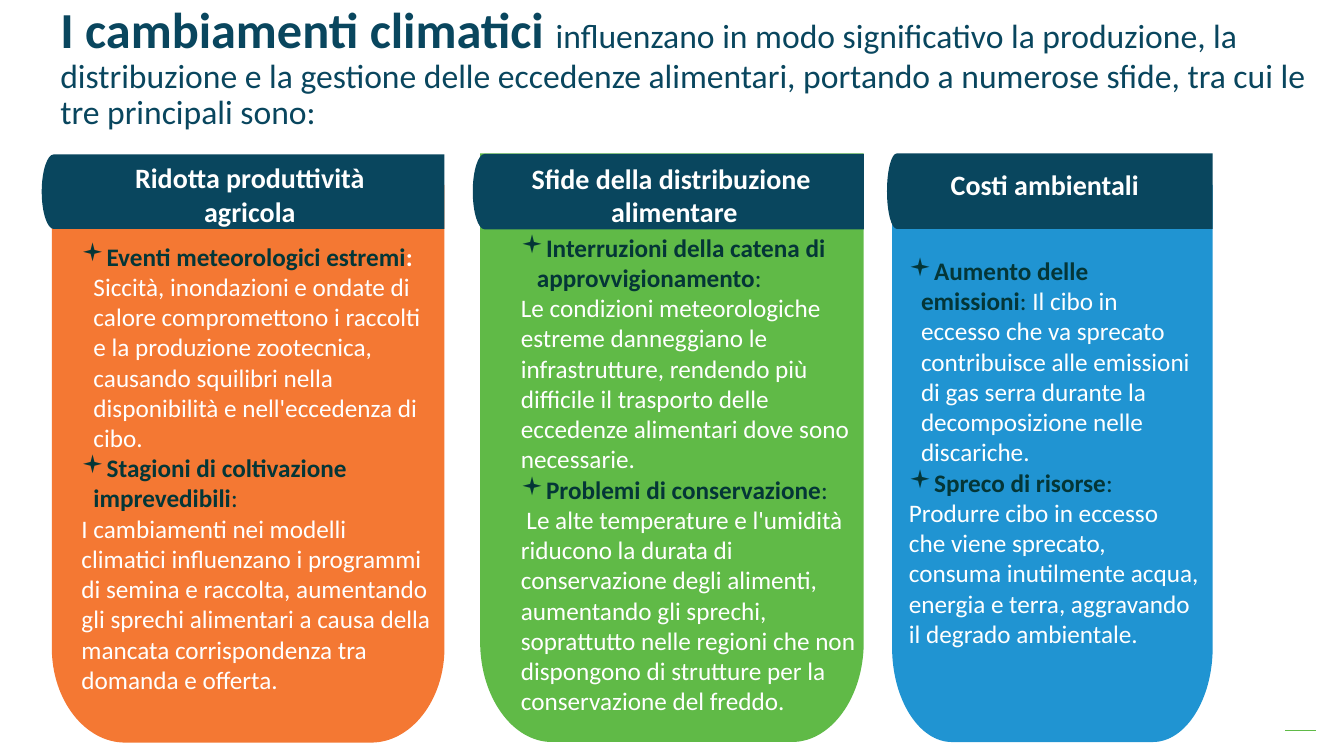
"""Build a slide with three cards on how climate change affects surplus food."""
from dataclasses import dataclass
from typing import Optional

import lxml.etree
import pptx
import pptx.dml.color
import pptx.enum.shapes
import pptx.enum.text
import pptx.oxml.ns
import pptx.util

FONT = "Calibri"
NAVY = "09465E"
INK = "043637"
WHITE = "FFFFFF"
GREEN = "60BA47"
ROUNDNESS = 0.55
Pt = pptx.util.Pt
qn = pptx.oxml.ns.qn
Point = tuple[float, float]


@dataclass
class Frame:
    left: float
    top: float
    width: float
    height: float


@dataclass
class Segment:
    end: Point
    corner: Optional[Point] = None


@dataclass
class Span:
    text: str
    color: str = WHITE
    bold: bool = False
    size: float = 18


@dataclass
class Para:
    spans: list[Span]
    margin: float = 0
    first: float = 0
    bullet: bool = False
    centered: bool = False


@dataclass
class Card:
    fill: str
    panel: Frame
    banner: Frame
    heading_frame: Frame
    heading: list[str]
    body_frame: Frame
    body: list[Para]


def rgb(color: str) -> pptx.dml.color.RGBColor:
    return pptx.dml.color.RGBColor.from_string(color)


def point(text: str, indent: float, *rest: Span) -> Para:
    return Para([Span(text, INK, True), *rest], indent, -indent, bullet=True)


def panel_outline(width: float, height: float) -> list[Segment]:
    rx, ry = 0.187 * width, 0.17 * height
    return [Segment((0, 0)), Segment((width, 0)), Segment((width, height - ry)),
            Segment((width - rx, height), (width, height)), Segment((rx, height)),
            Segment((0, height - ry), (0, height))]


def banner_outline(width: float, height: float) -> list[Segment]:
    rx = 0.03 * width
    return [Segment((width, 0)), Segment((width, height)), Segment((rx, height)),
            Segment((0, height / 2), (0, height)), Segment((rx, 0), (0, 0))]


def toward(start: Point, corner: Point) -> Point:
    return tuple(a + ROUNDNESS * (b - a) for a, b in zip(start, corner))


def add_outline(page, frame: Frame, segments: list[Segment], fill: str) -> None:
    ends = [(Pt(segment.end[0]), Pt(segment.end[1])) for segment in segments]
    builder = page.shapes.build_freeform(*ends[0], scale=1.0)
    builder.add_line_segments(ends[1:], close=True)
    shape = builder.convert_to_shape(Pt(frame.left), Pt(frame.top))
    lines = list(shape._element.iter(qn("a:lnTo")))
    for before, segment, line in zip(segments, segments[1:], lines):
        if segment.corner:
            line.tag = qn("a:cubicBezTo")
            controls = [toward(before.end, segment.corner), toward(segment.end, segment.corner)]
            for index, (x, y) in enumerate(controls):
                control = lxml.etree.Element(qn("a:pt"), x=str(Pt(x)), y=str(Pt(y)))
                line.insert(index, control)
    shape.shadow.inherit = False
    shape.fill.solid()
    shape.fill.fore_color.rgb = rgb(fill)
    shape.line.fill.background()


def add_text(page, frame: Frame, paras: list[Para]):
    box = page.shapes.add_textbox(Pt(frame.left), Pt(frame.top), Pt(frame.width), Pt(frame.height))
    text_frame = box.text_frame
    text_frame.word_wrap = True
    text_frame.auto_size = pptx.enum.text.MSO_AUTO_SIZE.SHAPE_TO_FIT_TEXT
    for index, para in enumerate(paras):
        paragraph = text_frame.add_paragraph() if index else text_frame.paragraphs[0]
        properties = paragraph._p.get_or_add_pPr()
        properties.set("marL", str(Pt(para.margin)))
        properties.set("indent", str(Pt(para.first)))
        if para.bullet:
            lxml.etree.SubElement(properties, qn("a:buFont"), typeface="Wingdings")
            lxml.etree.SubElement(properties, qn("a:buChar"), char="▪")
        if para.centered:
            paragraph.alignment = pptx.enum.text.PP_ALIGN.CENTER
        for span in para.spans:
            run = paragraph.add_run()
            run.text = span.text
            run.font.name = FONT
            run.font.size = Pt(span.size)
            run.font.bold = span.bold
            run.font.color.rgb = rgb(span.color)
    return box


def add_card(page, card: Card) -> None:
    panel, banner = card.panel, card.banner
    add_outline(page, panel, panel_outline(panel.width, panel.height), card.fill)
    add_outline(page, banner, banner_outline(banner.width, banner.height), NAVY)
    heading = [Para([Span(line, bold=True, size=20)], centered=True) for line in card.heading]
    add_text(page, card.heading_frame, heading)
    add_text(page, card.body_frame, card.body)


def add_title(page) -> None:
    title = Para([
        Span("I cambiamenti climatici ", NAVY, True, 36),
        Span("influenzano in modo significativo la produzione, la distribuzione e la gestione "
             "delle eccedenze alimentari, portando a numerose sfide, tra cui le tre principali "
             "sono:", NAVY, size=24)], margin=36)
    paragraph = add_text(page, Frame(0, 0, 948, 98.6), [title]).text_frame.paragraphs[0]
    paragraph.line_spacing = 0.9
    paragraph.space_after = Pt(8)


def add_accent(page) -> None:
    accent = page.shapes.add_connector(
        pptx.enum.shapes.MSO_CONNECTOR.STRAIGHT, Pt(918), Pt(522), Pt(940.3), Pt(522))
    accent.line.color.rgb = rgb(GREEN)
    accent.line.width = Pt(1)
    lxml.etree.SubElement(accent._element.spPr, qn("a:effectLst"))


COLON = Span(":", INK)
CARDS = [
    Card("F47833", Frame(37, 132, 280.5, 398.4), Frame(29.8, 110.3, 287.7, 53.3),
         Frame(69.8, 111.3, 217.4, 55.4), ["Ridotta produttività agricola"],
         Frame(51.1, 168.5, 267.8, 334), [
             point("Eventi meteorologici estremi", 8.6, Span(": ", bold=True),
                   Span("Siccità, inondazioni e ondate di calore compromettono i raccolti e la "
                        "produzione zootecnica, causando squilibri nella disponibilità e "
                        "nell'eccedenza di cibo.")),
             point("Stagioni di coltivazione imprevedibili", 8.6, COLON),
             Para([Span("I cambiamenti nei modelli climatici influenzano i programmi di semina "
                        "e raccolta, aumentando gli sprechi alimentari a causa della mancata "
                        "corrispondenza tra domanda e offerta.")])]),
    Card(GREEN, Frame(343, 109.6, 274, 420.4), Frame(337.7, 110, 279.3, 53.8),
         Frame(320.4, 111.6, 322.6, 55.4), ["Sfide della distribuzione ", "alimentare"],
         Frame(365, 162.2, 269.3, 356.4), [
             point("Interruzioni della catena di approvvigionamento", 11.5, COLON),
             Para([Span("Le condizioni meteorologiche estreme danneggiano le infrastrutture, "
                        "rendendo più difficile il trasporto delle eccedenze alimentari dove "
                        "sono necessarie.")]),
             point("Problemi di conservazione", 11.5, COLON),
             Para([Span("Le alte temperature e l'umidità riducono la durata di conservazione "
                        "degli alimenti, aumentando gli sprechi, soprattutto nelle regioni che "
                        "non dispongono di strutture per la conservazione del freddo.")],
                  first=4)]),
    Card("2094D2", Frame(637.2, 132, 229, 398), Frame(633.6, 109.6, 232.6, 53.9),
         Frame(661, 116.3, 170.6, 55.4), ["Costi ambientali"],
         Frame(642.2, 178.8, 221.8, 290.9), [
             point("Aumento delle emissioni", 8.6, Span(": ", INK),
                   Span("Il cibo in eccesso che va sprecato contribuisce alle emissioni di gas "
                        "serra durante la decomposizione nelle discariche.")),
             point("Spreco di risorse", 8.6, COLON),
             Para([Span("Produrre cibo in eccesso che viene sprecato, consuma inutilmente "
                        "acqua, energia e terra, aggravando il degrado ambientale.")])]),
]


def main() -> None:
    deck = pptx.Presentation()
    deck.slide_width, deck.slide_height = Pt(960), Pt(540)
    page = deck.slides.add_slide(deck.slide_layouts[6])
    add_accent(page)
    add_title(page)
    for card in CARDS:
        add_card(page, card)
    deck.save("out.pptx")


if __name__ == "__main__":
    main()
